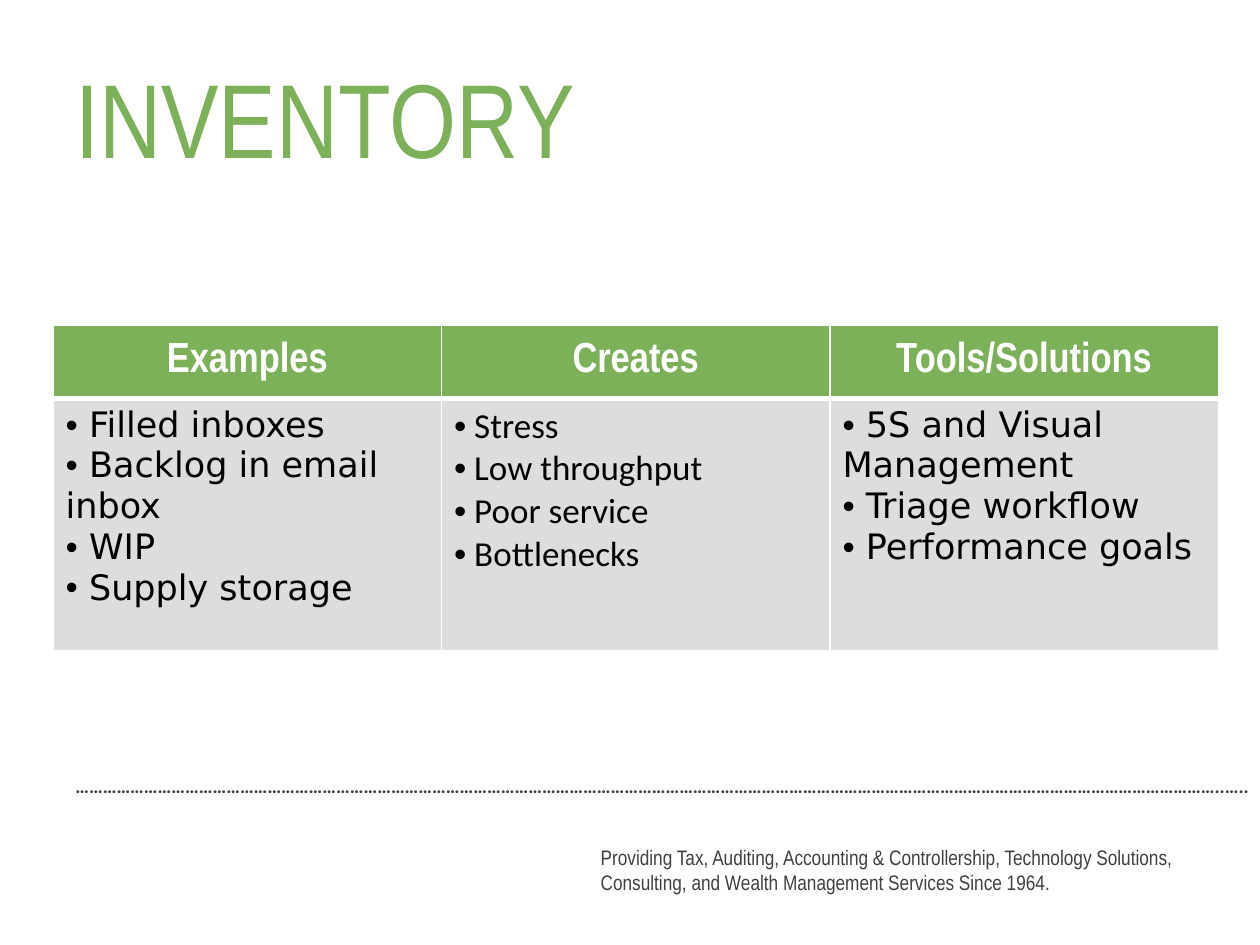
from lxml.etree import SubElement
from pptx import Presentation
from pptx.dml.color import RGBColor
from pptx.enum.text import MSO_ANCHOR as Anchor, PP_ALIGN as Align
from pptx.oxml.ns import qn
from pptx.util import Cm, Pt

GREEN, GREY, WHITE, BLACK, DARK = "7CB059", "DDDDDD", "FFFFFF", "000000", "404040"
TITLE = "INVENTORY"
COLUMNS = [
    ("Examples", "DejaVu Sans",
     ["Filled inboxes", "Backlog in email inbox", "WIP", "Supply storage"]),
    ("Creates", "Calibri",
     ["Stress", "Low throughput", "Poor service", "Bottlenecks"]),
    ("Tools/Solutions", "DejaVu Sans",
     ["5S and Visual Management", "Triage workflow", "Performance goals"]),
]
DOTTED_RULE = "…" * 83 + "..….."
TAGLINE = ("Providing Tax, Auditing, Accounting & Controllership, Technology Solutions, "
           "Consulting, and Wealth Management Services Since 1964.")
COLUMN_WIDTH = 7.83
ROW_HEIGHTS = [1.47, 5.08]


def rgb(color):
    return RGBColor.from_string(color)


def style(paragraph, size, face, color, bold=False):
    font = paragraph.font
    font.size, font.name, font.bold = Pt(size), face, bold
    font.color.rgb = rgb(color)


def add_text(slide, text, box, size, face, bold=False, wrap=True, anchor=Anchor.TOP):
    frame = slide.shapes.add_textbox(*map(Cm, box)).text_frame
    frame.word_wrap, frame.vertical_anchor = wrap, anchor
    frame.text = text
    style(frame.paragraphs[0], size, face, DARK, bold)


def add_bullet(paragraph):
    properties = paragraph._p.get_or_add_pPr()
    properties.set("marL", "0")
    properties.set("indent", "0")
    SubElement(properties, qn("a:buFont"), typeface="Arial")
    SubElement(properties, qn("a:buChar"), char="•")


def format_cell(cell, color, top, bottom):
    properties = cell._tc.get_or_add_tcPr()
    for side, width in (("L", 1), ("R", 1), ("T", top), ("B", bottom)):
        line = SubElement(properties, qn(f"a:ln{side}"), w=str(Pt(width)))
        SubElement(SubElement(line, qn("a:solidFill")), qn("a:srgbClr"), val=WHITE)
    cell.fill.solid()
    cell.fill.fore_color.rgb = rgb(color)


def add_inventory_table(slide):
    table = slide.shapes.add_table(
        2, len(COLUMNS), Cm(1.07), Cm(6.56),
        Cm(COLUMN_WIDTH * len(COLUMNS)), Cm(sum(ROW_HEIGHTS))).table
    for row, height in zip(table.rows, ROW_HEIGHTS):
        row.height = Cm(height)
    for index, (heading, face, items) in enumerate(COLUMNS):
        table.columns[index].width = Cm(COLUMN_WIDTH)
        head, body = table.cell(0, index), table.cell(1, index)
        format_cell(head, GREEN, 1, 3)
        format_cell(body, GREY, 3, 1)
        head.text = heading
        head.vertical_anchor = Anchor.MIDDLE
        head_line = head.text_frame.paragraphs[0]
        head_line.alignment = Align.CENTER
        style(head_line, 24, "Arial Narrow", WHITE, True)
        body.text = "\n".join(f" {item}" for item in items)
        for paragraph in body.text_frame.paragraphs:
            add_bullet(paragraph)
            style(paragraph, 20, face, BLACK)


def main():
    deck = Presentation()
    deck.slide_width, deck.slide_height = Cm(25.4), Cm(19.05)
    slide = deck.slides.add_slide(deck.slide_layouts[5])

    title = slide.shapes.title
    title.left, title.top, title.width, title.height = map(Cm, (1.27, 0.76, 22.86, 3.18))
    title.text = TITLE
    title.text_frame.vertical_anchor = Anchor.MIDDLE
    title_line = title.text_frame.paragraphs[0]
    title_line.alignment = Align.LEFT
    style(title_line, 60, "Arial Narrow", GREEN)

    add_text(slide, DOTTED_RULE, (1.27, 15.49, 24.56, 0.74), 11, "Calibri",
             bold=True, wrap=False)
    add_text(slide, TAGLINE, (11.86, 16.59, 13.13, 1.88), 12, "Arial Narrow",
             anchor=Anchor.MIDDLE)
    add_inventory_table(slide)
    deck.save("out.pptx")


if __name__ == "__main__":
    main()
